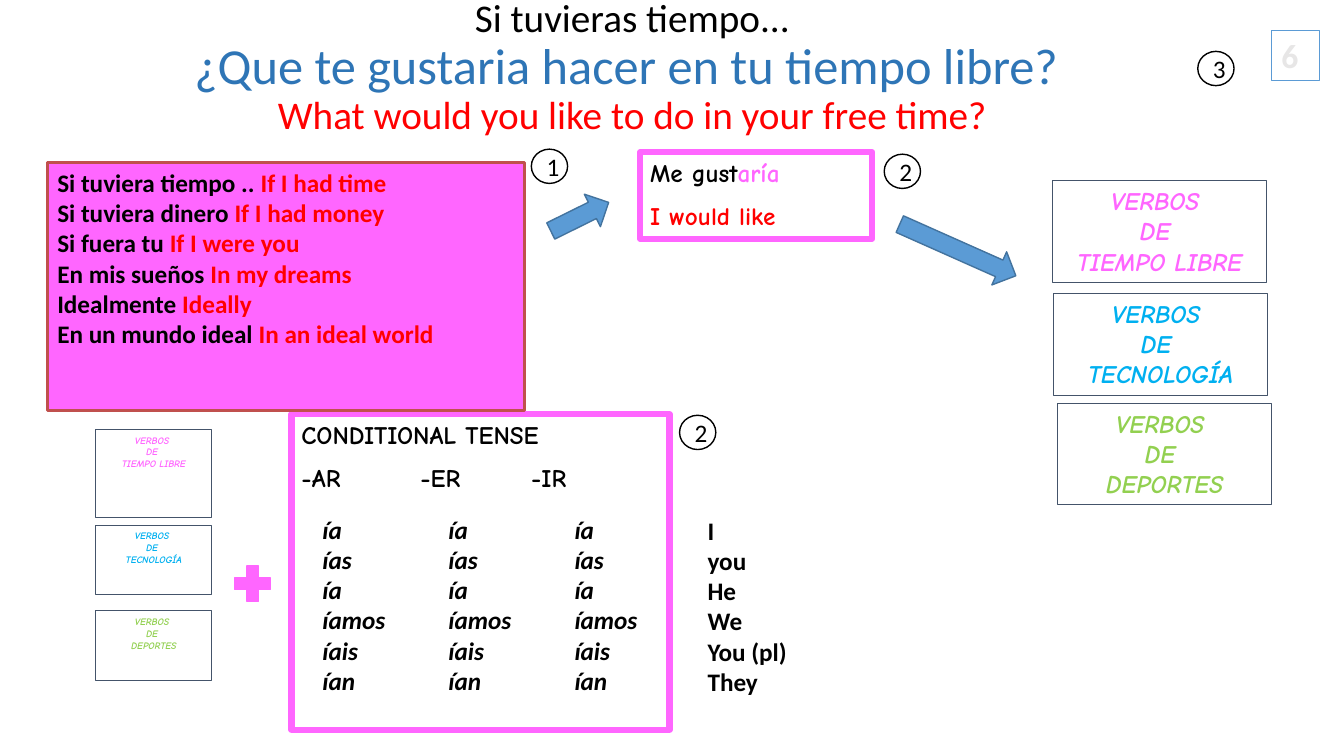
from lxml.etree import SubElement
from pptx import Presentation
from pptx.dml.color import RGBColor
from pptx.enum.shapes import MSO_SHAPE
from pptx.enum.text import MSO_ANCHOR, MSO_AUTO_SIZE, PP_ALIGN
from pptx.oxml.ns import qn
from pptx.util import Pt

PX = 9144  # 100 px to the inch

BLACK = RGBColor(0x00, 0x00, 0x00)
RED = RGBColor(0xFF, 0x00, 0x00)
PINK = RGBColor(0xFF, 0x66, 0xFF)
BRICK = RGBColor(0xC0, 0x50, 0x4D)
CYAN = RGBColor(0x00, 0xB0, 0xF0)
GREEN = RGBColor(0x92, 0xD0, 0x50)
BLUE = RGBColor(0x5B, 0x9B, 0xD5)
NAVY = RGBColor(0x43, 0x73, 0x9E)
DEEP = RGBColor(0x2E, 0x75, 0xB6)
SLATE = RGBColor(0x44, 0x54, 0x6A)
PALE = RGBColor(0xE7, 0xE6, 0xE6)

SANS = "Calibri"
COMIC = "Comic Neue"


class Sheet:
    def __init__(self, slide):
        self.slide = slide
        self.shapes = slide.shapes

    def place(self, shape, box):
        shape.left, shape.top, shape.width, shape.height = (n * PX for n in box)

    def add_run(self, para, text, color, size=18, font=SANS, bold=False,
                slant=False):
        run = para.add_run()
        run.text = text
        style = run.font
        style.name, style.size = font, Pt(size)
        style.bold, style.italic = bold, slant
        style.color.rgb = color

    def label(self, shape, paras, align=PP_ALIGN.LEFT, anchor=MSO_ANCHOR.TOP,
              gap=0, **style):
        """Fill a shape with paragraphs, each a list of (text, color) runs."""
        frame = shape.text_frame
        frame.word_wrap = True
        frame.vertical_anchor = anchor
        for i, runs in enumerate(paras):
            para = frame.add_paragraph() if i else frame.paragraphs[0]
            para.alignment = align
            if i and gap:
                para.space_before = Pt(gap)
            for text, color in runs:
                self.add_run(para, text, color, **style)
        return frame

    def title(self, box, lines):
        title = self.shapes.title
        self.place(title, box)
        frame = title.text_frame
        frame.auto_size = MSO_AUTO_SIZE.NONE
        frame.word_wrap = True
        frame.vertical_anchor = MSO_ANCHOR.BOTTOM
        para = frame.paragraphs[0]
        para.alignment = PP_ALIGN.CENTER
        para.line_spacing = 0.9
        for i, (text, color, size) in enumerate(lines):
            if i:
                para.add_line_break()
            self.add_run(para, text, color, size)

    def shape(self, kind, box, line, width, fill=None, turn=0):
        shape = self.shapes.add_shape(kind, *(n * PX for n in box))
        shape.shadow.inherit = False
        shape.rotation = turn
        if fill is None:
            shape.fill.background()
        else:
            shape.fill.solid()
            shape.fill.fore_color.rgb = fill
        shape.line.color.rgb = line
        shape.line.width = Pt(width)
        return shape

    def panel(self, box, paras, line, width, fill=None, **style):
        rect = self.shape(MSO_SHAPE.RECTANGLE, box, line, width, fill)
        return self.label(rect, paras, **style)

    def column(self, box, lines, slant=False):
        """Add a text box whose lines are split by breaks."""
        frame = self.shapes.add_textbox(*(n * PX for n in box)).text_frame
        frame.word_wrap = True
        para = frame.paragraphs[0]
        for i, text in enumerate(lines):
            if i:
                para.add_line_break()
            self.add_run(para, text, BLACK, bold=True, slant=slant)

    def badge(self, left, top, digit):
        oval = self.shape(MSO_SHAPE.OVAL, (left, top, 36, 34), BLACK, 1)
        self.label(oval, [[(digit, BLACK)]], PP_ALIGN.CENTER, MSO_ANCHOR.MIDDLE)

    def arrow(self, box, turn):
        self.shape(MSO_SHAPE.RIGHT_ARROW, box, NAVY, 1, BLUE, turn)

    def verbs(self, box, topic, color, size):
        paras = [[(text, color)] for text in ("VERBOS ", "DE ", topic)]
        self.panel(box, paras, SLATE, 0.75, align=PP_ALIGN.CENTER,
                   size=size, font=COMIC, bold=True, slant=True)

    def tabs(self, para, stops):
        tabs = SubElement(para._p.get_or_add_pPr(), qn("a:tabLst"))
        for stop in stops:
            SubElement(tabs, qn("a:tab"), pos=str(stop * PX), algn="l")


def main():
    deck = Presentation()
    deck.slide_width, deck.slide_height = 1333 * PX, 750 * PX
    sheet = Sheet(deck.slides.add_slide(deck.slide_layouts[5]))

    sheet.title((32, 47, 1190, 95), [
        ("Si tuvieras tiempo...", BLACK, 28),
        ("¿Que te gustaria hacer en tu tiempo libre? ", DEEP, 36),
        ("What would you like to do in your free time?", RED, 28),
    ])

    tense = sheet.panel((289, 411, 375, 313), [
        [("CONDITIONAL TENSE", BLACK)],
        [("-AR\t-ER\t-IR", BLACK)],
    ], PINK, 4.5, gap=9, font=COMIC, bold=True)
    sheet.tabs(tense.paragraphs[1], (118, 228))

    sheet.panel((1261, 30, 48, 50), [[("6", PALE)]], BLUE, 0.75,
                anchor=MSO_ANCHOR.MIDDLE, size=24, bold=True)

    phrases = [
        ("Si tuviera tiempo .. ", "If I had time"),
        ("Si tuviera dinero ", "If I had money"),
        ("Si fuera tu ", "If I were you"),
        ("En mis sueños ", "In my dreams"),
        ("Idealmente ", "Ideally"),
        ("En un mundo ideal ", "In an ideal world"),
    ]
    sheet.panel((47, 161, 473, 246),
                [[(ours, BLACK), (theirs, RED)] for ours, theirs in phrases],
                BRICK, 2, PINK, bold=True)

    ends = ("ía", "ías", "ía", "íamos", "íais", "ían")
    for i in range(3):
        sheet.column((310 + 125 * i, 505, 104, 192), ends, slant=True)
    sheet.column((692, 506, 104, 192),
                 ("I", "you", "He", "We", "You (pl)", "They"))
    sheet.shape(MSO_SHAPE.MATH_PLUS, (226, 555, 49, 48), PINK, 1, PINK)

    sheet.panel((635, 151, 230, 86), [
        [("Me gust", BLACK), ("aría", PINK)],
        [("I would like", RED)],
    ], PINK, 4.5, gap=9, font=COMIC, bold=True)

    sheet.arrow((543, 197, 64, 36), 333.7)
    sheet.arrow((887, 230, 126, 36), 24)

    for left, top, digit in ((527, 148, "1"), (877, 153, "2"),
                             (674, 412, "2"), (1188, 51, "3")):
        sheet.badge(left, top, digit)

    topics = [
        ("TIEMPO LIBRE", PINK, (95, 426, 115, 87), (1044, 179, 212, 101)),
        ("TECNOLOGÍA", CYAN, (95, 521, 115, 69), (1045, 291, 212, 101)),
        ("DEPORTES", GREEN, (95, 606, 115, 69), (1049, 400, 212, 101)),
    ]
    for topic, color, small, large in topics:
        sheet.verbs(small, topic, color, 7)
        sheet.verbs(large, topic, color, 18)

    deck.save("out.pptx")


if __name__ == "__main__":
    main()
